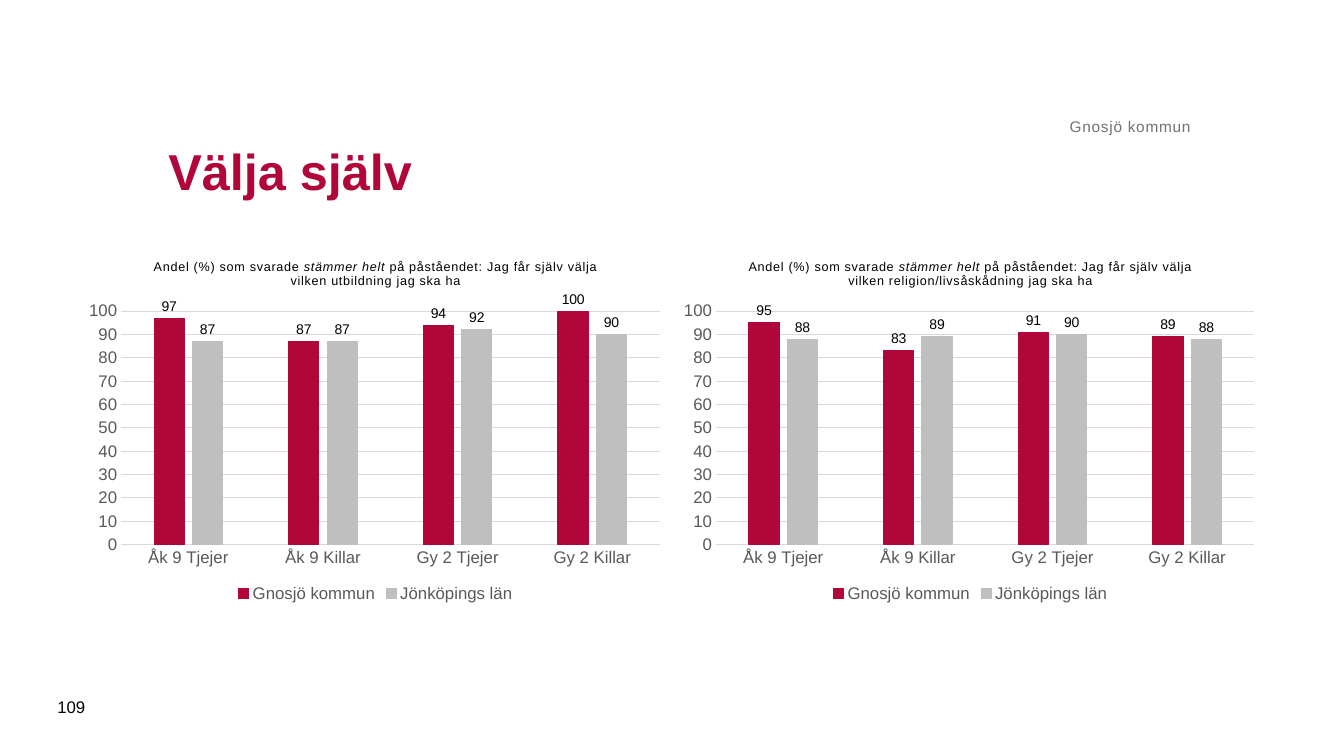
from dataclasses import dataclass

from lxml import etree
from pptx import Presentation
from pptx.chart.data import CategoryChartData
from pptx.dml.color import RGBColor
from pptx.enum.chart import (XL_CHART_TYPE, XL_LABEL_POSITION,
                             XL_LEGEND_POSITION, XL_TICK_MARK)
from pptx.enum.text import MSO_ANCHOR, PP_ALIGN
from pptx.oxml.ns import qn
from pptx.util import Inches, Pt

COLUMNS = XL_CHART_TYPE.COLUMN_CLUSTERED
LABEL_OUTSIDE = XL_LABEL_POSITION.OUTSIDE_END
LEGEND_BOTTOM = XL_LEGEND_POSITION.BOTTOM
NO_TICK = XL_TICK_MARK.NONE
MIDDLE, BOTTOM = MSO_ANCHOR.MIDDLE, MSO_ANCHOR.BOTTOM
LEFT, RIGHT = PP_ALIGN.LEFT, PP_ALIGN.RIGHT


@dataclass(frozen=True)
class Theme:
    font: str = "Arial"
    accent: str = "B1063A"
    grey: str = "BFBFBF"
    grid: str = "D9D9D9"
    axis_text: str = "595959"
    muted: str = "717171"
    black: str = "000000"
    title: float = 36
    axis: float = 12
    source: float = 11
    label: float = 10
    chart_title: float = 9
    hairline: float = 0.75


@dataclass(frozen=True)
class ChoiceChart:
    left: float
    topic: str
    municipality: tuple[int, ...]
    county: tuple[int, ...]


THEME = Theme()
NUMBER_FORMAT = "#,##0;#,##0"
CATEGORIES = ("Åk 9 Tjejer", "Åk 9 Killar", "Gy 2 Tjejer", "Gy 2 Killar")
CHART_TOP, CHART_WIDTH, CHART_HEIGHT = 2.4, 5.87, 3.62
PLOT_AREA = {"x": 0.07, "y": 0.19, "w": 0.91, "h": 0.64}
CHARTS = (
    ChoiceChart(0.79, "utbildning", (97, 87, 94, 100), (87, 87, 92, 90)),
    ChoiceChart(6.69, "religion/livsåskådning", (95, 83, 91, 89), (88, 89, 90, 88)),
)


def set_font(font, size: float, color: str, bold: bool = False, italic: bool = False) -> None:
    font.name = THEME.font
    font.size = Pt(size)
    font.bold = bold
    font.italic = italic
    font.color.rgb = RGBColor.from_string(color)


def add_run(p, text: str, *, size: float, color: str, bold: bool = False,
            italic: bool = False, spacing: float = 0) -> None:
    r = p.add_run()
    r.text = text
    set_font(r.font, size, color, bold, italic)
    if spacing:
        r.font._element.set("spc", str(int(spacing * 100)))


def write(sp, text: str, *, anchor=MIDDLE, align=LEFT, margin: float | None = None,
          **run_format) -> None:
    tf = sp.text_frame
    tf.word_wrap = True
    tf.vertical_anchor = anchor
    if margin is not None:
        tf.margin_left = tf.margin_right = Inches(margin)
        tf.margin_top = tf.margin_bottom = Inches(margin)
    p = tf.paragraphs[0]
    p.alignment = align
    add_run(p, text, **run_format)


def set_line(line, color: str) -> None:
    line.color.rgb = RGBColor.from_string(color)
    line.width = Pt(THEME.hairline)


def fix_plot_area(chart) -> None:
    """Give the inner plot area a fixed place within the chart."""
    plot_area = chart._chartSpace.chart.plotArea
    for old in plot_area.findall(qn("c:layout")):
        plot_area.remove(old)
    layout = etree.Element(qn("c:layout"))
    manual = etree.SubElement(layout, qn("c:manualLayout"))
    settings = {"layoutTarget": "inner", "xMode": "edge", "yMode": "edge", **PLOT_AREA}
    for name, value in settings.items():
        etree.SubElement(manual, qn(f"c:{name}")).set("val", str(value))
    plot_area.insert(0, layout)


def format_axes(chart) -> None:
    for axis in (chart.category_axis, chart.value_axis):
        axis.major_tick_mark = axis.minor_tick_mark = NO_TICK
        set_font(axis.tick_labels.font, THEME.axis, THEME.axis_text)
    set_line(chart.category_axis.format.line, THEME.grid)
    values = chart.value_axis
    values.minimum_scale, values.maximum_scale, values.major_unit = 0, 100, 10
    values.format.line.fill.background()
    values.tick_labels.number_format = NUMBER_FORMAT
    values.tick_labels.number_format_is_linked = False
    set_line(values.major_gridlines.format.line, THEME.grid)


def format_columns(plot) -> None:
    plot.gap_width, plot.overlap = 219, -27
    plot.vary_by_categories = False
    for series, color in zip(plot.series, (THEME.accent, THEME.grey)):
        series.format.fill.solid()
        series.format.fill.fore_color.rgb = RGBColor.from_string(color)
        set_line(series.format.line, color)
        labels = series.data_labels
        labels.show_value = True
        labels.position = LABEL_OUTSIDE
        labels.number_format = NUMBER_FORMAT
        labels.number_format_is_linked = False
        set_font(labels.font, THEME.label, THEME.black)


def add_choice_chart(slide, item: ChoiceChart) -> None:
    data = CategoryChartData()
    data.categories = CATEGORIES
    data.add_series("Gnosjö kommun", item.municipality)
    data.add_series("Jönköpings län", item.county)
    chart = slide.shapes.add_chart(
        COLUMNS, Inches(item.left), Inches(CHART_TOP),
        Inches(CHART_WIDTH), Inches(CHART_HEIGHT), data).chart
    set_font(chart.font, THEME.label, THEME.black)

    p = chart.chart_title.text_frame.paragraphs[0]
    question = (
        ("Andel (%) som svarade ", False),
        ("stämmer helt", True),
        (f" på påståendet: Jag får själv välja vilken {item.topic} jag ska ha", False),
    )
    for text, italic in question:
        add_run(p, text, size=THEME.chart_title, color=THEME.black,
                italic=italic, spacing=0.5)
    chart.chart_title.include_in_layout = False

    chart.has_legend = True
    chart.legend.position = LEGEND_BOTTOM
    chart.legend.include_in_layout = False
    set_font(chart.legend.font, THEME.axis, THEME.axis_text)
    format_axes(chart)
    format_columns(chart.plots[0])
    fix_plot_area(chart)


def main() -> None:
    prs = Presentation()
    prs.slide_width, prs.slide_height = Inches(13.33), Inches(7.5)
    slide = prs.slides.add_slide(prs.slide_layouts[5])

    for item in CHARTS:
        add_choice_chart(slide, item)

    title = slide.shapes.title
    title.left, title.top = Inches(1.57), Inches(0.98)
    title.width, title.height = Inches(10.24), Inches(1.42)
    write(title, "Välja själv", size=THEME.title, color=THEME.accent, bold=True)

    source = slide.shapes.add_textbox(Inches(1.57), Inches(0.62), Inches(10.24), Inches(0.73))
    write(source, "Gnosjö kommun", anchor=BOTTOM, align=RIGHT, margin=0,
          size=THEME.source, color=THEME.muted, spacing=0.5)

    number = slide.shapes.add_textbox(Inches(0.47), Inches(6.81), Inches(0.57), Inches(0.4))
    write(number, "109", size=THEME.axis, color=THEME.black)

    prs.save("out.pptx")


if __name__ == "__main__":
    main()
